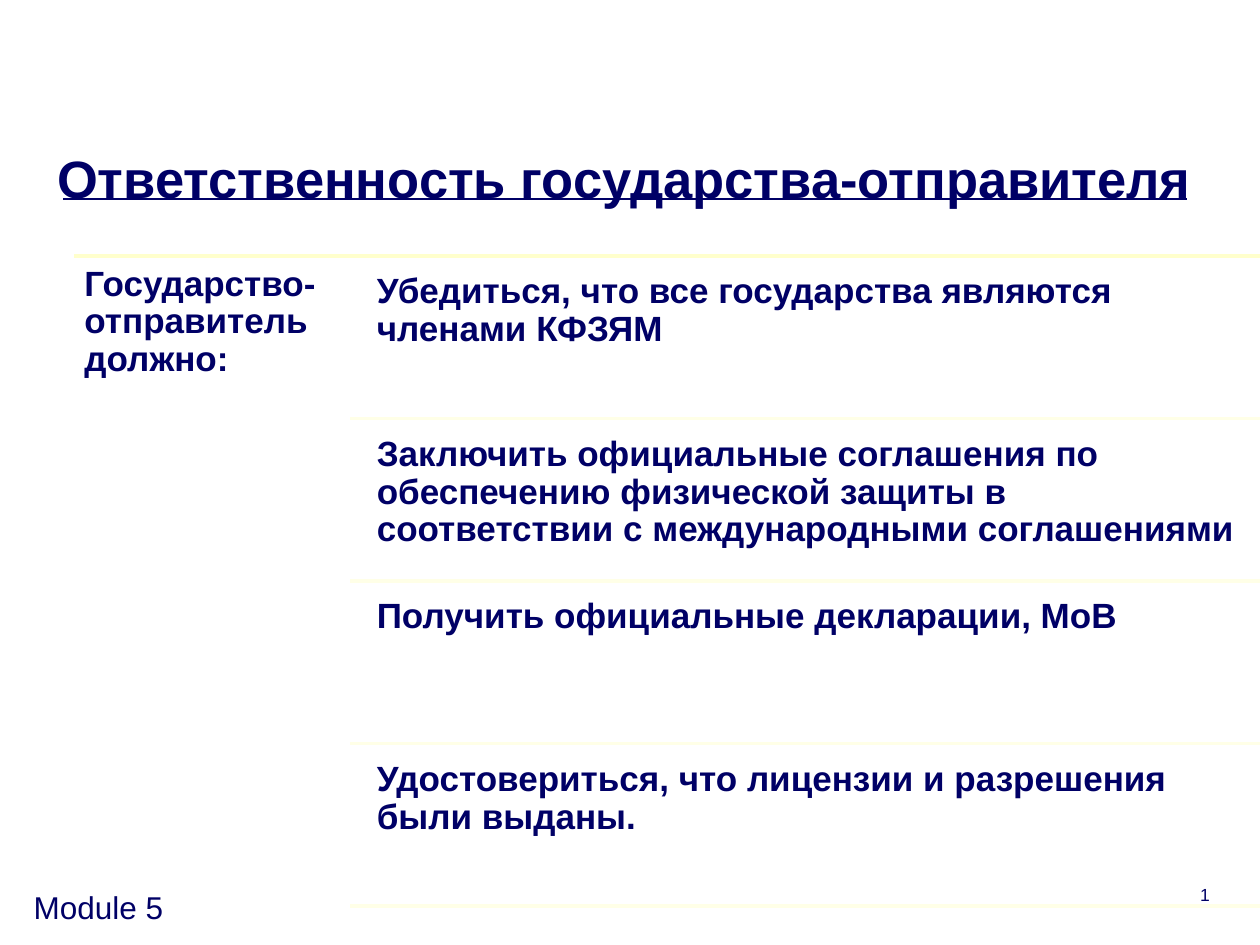
import dataclasses

import lxml.etree
import pptx
import pptx.dml.color
import pptx.enum.shapes
import pptx.enum.text
import pptx.oxml.ns
import pptx.util

Pt = pptx.util.Pt
ALIGN = pptx.enum.text.PP_ALIGN
ANCHOR = pptx.enum.text.MSO_ANCHOR


@dataclasses.dataclass(frozen=True)
class Theme:
    """Colours, font and type sizes of the slide."""
    font: str = "Arial"
    ink: str = "000066"
    rule: str = "FFFFCC"
    faint_rule: str = "FFFFE7"
    title: int = 30
    body: int = 20
    footer: int = 18
    number: int = 10


THEME = Theme()
TITLE = "Ответственность государства-отправителя"
LEAD = "Государство-отправитель должно:"
DUTIES = [
    "Убедиться, что все государства являются членами КФЗЯМ",
    "Заключить официальные соглашения по обеспечению физической защиты "
    "в соответствии с международными соглашениями",
    "Получить официальные декларации, МоВ",
    "Удостовериться, что лицензии и разрешения были выданы.",
]


def style_paragraph(paragraph, size, bold=False, align=ALIGN.LEFT):
    """Give a paragraph the theme font, colour and alignment."""
    paragraph.alignment = align
    paragraph.font.name = THEME.font
    paragraph.font.size = Pt(size)
    paragraph.font.bold = bold
    paragraph.font.color.rgb = pptx.dml.color.RGBColor.from_string(THEME.ink)


def add_text(slide, box, text, size, bold=False, align=ALIGN.LEFT):
    """Add a wrapped text box and return its shape."""
    shape = slide.shapes.add_textbox(*map(Pt, box))
    shape.text_frame.word_wrap = True
    paragraph = shape.text_frame.paragraphs[0]
    paragraph.text = text
    style_paragraph(paragraph, size, bold, align)
    return shape


def add_rule(slide, left, right, y, colour, width):
    """Draw a horizontal line without a shadow."""
    line = slide.shapes.add_connector(
        pptx.enum.shapes.MSO_CONNECTOR.STRAIGHT, Pt(left), Pt(y), Pt(right), Pt(y))
    line.line.color.rgb = pptx.dml.color.RGBColor.from_string(colour)
    line.line.width = Pt(width)
    lxml.etree.SubElement(line._element.spPr, pptx.oxml.ns.qn("a:effectLst"))


def add_title(slide, box):
    """Place the title and the line beneath it."""
    left, top, width, height = box
    add_rule(slide, 36, 678.2, top + 36, THEME.ink, 1)
    title = slide.shapes.title
    title.left, title.top, title.width, title.height = map(Pt, box)
    frame = title.text_frame
    frame.word_wrap = True
    frame.auto_size = pptx.enum.text.MSO_AUTO_SIZE.NONE
    frame.vertical_anchor = ANCHOR.BOTTOM
    frame.margin_bottom = 0
    paragraph = frame.paragraphs[0]
    paragraph.text = TITLE
    style_paragraph(paragraph, THEME.title, True, ALIGN.CENTER)


def add_cell(slide, box, text):
    """Add one bold text of the duties panel."""
    frame = add_text(slide, box, text, THEME.body, True).text_frame
    frame.margin_left = frame.margin_right = Pt(5.76)
    frame.margin_top = frame.margin_bottom = Pt(5.76)
    frame.paragraphs[0].line_spacing = 0.9


def add_duties(slide, box):
    """Place the lead text and the evenly spaced, ruled duties."""
    left, top, width, height = box
    right, lead_width, padding = left + width, 157.7, 4.3
    row_height = height / len(DUTIES)
    column = left + lead_width
    add_rule(slide, left, right, top, THEME.rule, 2)
    add_cell(slide, (left, top, lead_width, 328.3), LEAD)
    for index, duty in enumerate(DUTIES):
        row_top = top + index * row_height
        cell_left = column + 9.4
        add_cell(slide, (cell_left, row_top + padding, right - cell_left,
                         row_height - padding), duty)
        add_rule(slide, column, right, row_top + row_height, THEME.faint_rule, 2)


def add_footer(slide, box):
    """Place the module name at the left and the slide number at the right."""
    left, top, width, height = box
    add_text(slide, (left, top, 185.8, height), "Module 5", THEME.footer)
    number = add_text(slide, (left + width - 162, top - 2.2, 162, 28.8), "8",
                      THEME.number, align=ALIGN.RIGHT)
    run = number.text_frame.paragraphs[0].runs[0]._r
    run.tag = pptx.oxml.ns.qn("a:fld")
    run.set("id", "{B6F15528-21DE-4FAA-801E-634DDDAF4B2B}")
    run.set("type", "slidenum")


def main():
    """Build and save the slide."""
    presentation = pptx.Presentation()
    presentation.slide_width, presentation.slide_height = Pt(720), Pt(540)
    slide = presentation.slides.add_slide(presentation.slide_layouts[5])
    add_title(slide, (18, 77.8, 677.5, 41.8))
    add_duties(slide, (42.5, 146.2, 677.5, 371.5))
    add_footer(slide, (12.2, 504, 686.2, 36))
    presentation.save("out.pptx")


if __name__ == "__main__":
    main()
